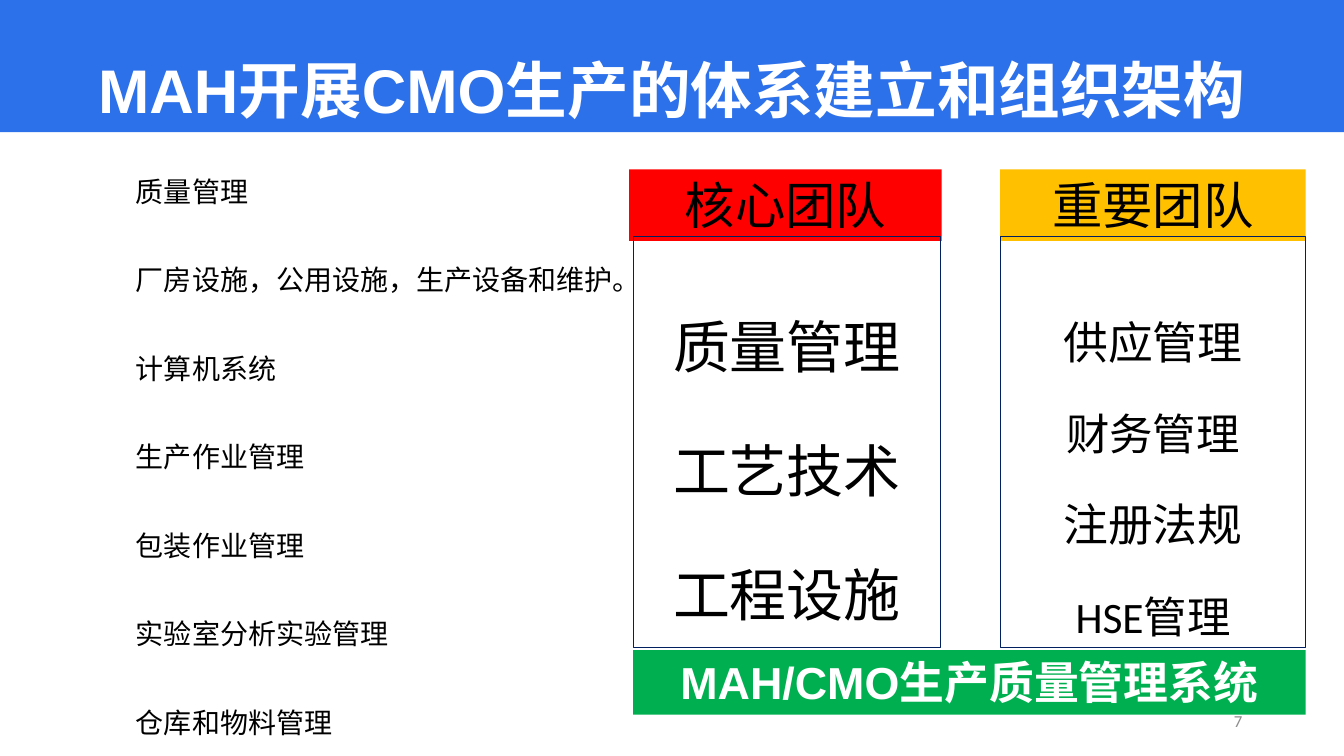
from pptx import Presentation
from pptx.dml.color import RGBColor
from pptx.enum.shapes import MSO_SHAPE as Shape
from pptx.enum.text import MSO_ANCHOR as Anchor, PP_ALIGN as Align
from pptx.util import Inches, Pt

WIDTH, HEIGHT = Inches(13.33), Inches(7.5)
LIST_LEFT, CORE_LEFT, KEY_LEFT = 9.38, 47.11, 74.42
KEY_WIDTH = 22.73
HEAD_TOP, HEAD_HEIGHT = 22.4, 9.47
BODY_TOP, BODY_HEIGHT = 31.33, 54.27
TOPICS = ["质量管理", "厂房设施，公用设施，生产设备和维护。", "计算机系统", "生产作业管理",
          "包装作业管理", "实验室分析实验管理", "仓库和物料管理"]
CORE_TEAM = ["质量管理", "工艺技术", "工程设施"]
KEY_TEAM = ["供应管理", "财务管理", "注册法规", "HSE管理"]


def color(value):
    """Turn a hex string into a colour."""
    return RGBColor.from_string(value)


def area(left, top, width, height):
    """Turn percentages of the slide into a position and size."""
    return (int(WIDTH * left / 100), int(HEIGHT * top / 100),
            int(WIDTH * width / 100), int(HEIGHT * height / 100))


def write(box, lines, sizes, align=Align.CENTER, anchor=Anchor.TOP, pitch=None,
          inset=0.05, **font):
    """Write one paragraph per line, with a fixed pitch if one is given."""
    frame = box.text_frame
    for name, value in {"word_wrap": True, "vertical_anchor": anchor,
                        "margin_top": Inches(inset)}.items():
        setattr(frame, name, value)
    looks = {"name": "Calibri", "bold": False} | font
    ink = looks.pop("ink", "000000")
    for index, (line, size) in enumerate(zip(lines, sizes)):
        para = frame.add_paragraph() if index else frame.paragraphs[0]
        para.alignment = align
        if pitch:
            height = round(sizes[0] * 1.2)
            para.line_spacing = Pt(height)
            para.space_before = Pt(pitch - height if index else 0)
        span = para.add_run()
        span.text = line
        for name, value in (looks | {"size": Pt(size)}).items():
            setattr(span.font, name, value)
        span.font.color.rgb = color(ink)


def add_title(page, text):
    """Fill the title placeholder as a banner across the top."""
    title = page.shapes.title
    title.left, title.top, title.width, title.height = area(0, 0, 100, 17.47)
    title.fill.solid()
    title.fill.fore_color.rgb = color("2C70EA")
    write(title, [text], [44], anchor=Anchor.BOTTOM, name="Arial", bold=True, ink="FFFFFF")
    title.text_frame.paragraphs[0].line_spacing = 0.9


def add_text(page, place, lines, sizes, **layout):
    """Add a plain text box."""
    write(page.shapes.add_textbox(*area(*place)), lines, sizes, **layout)


def add_panel(page, place, lines, sizes, fill=None, **layout):
    """Add a filled bar, or an outlined box when no fill is given."""
    panel = page.shapes.add_shape(Shape.RECTANGLE, *area(*place))
    panel.shadow.inherit = False
    if fill:
        panel.fill.solid()
        panel.fill.fore_color.rgb = color(fill)
        panel.line.fill.background()
    else:
        panel.fill.background()
        panel.line.color.rgb = color("002060")
        panel.line.width = Pt(0.75)
    write(panel, lines, sizes, **layout)


def main():
    """Build the slide and save it."""
    deck = Presentation()
    deck.slide_width, deck.slide_height = WIDTH, HEIGHT
    page = deck.slides.add_slide(deck.slide_layouts[5])
    add_title(page, "MAH开展CMO生产的体系建立和组织架构")
    add_text(page, (70.67, 92.67, 22.5, 5.33), ["7"], [12],
             align=Align.RIGHT, anchor=Anchor.MIDDLE, ink="8C8C8C")
    add_text(page, (LIST_LEFT, HEAD_TOP, 80.2, 64.27), TOPICS, [20] * len(TOPICS),
             align=Align.LEFT, pitch=63.2)
    add_panel(page, (46.81, HEAD_TOP, 23.26, HEAD_HEIGHT), ["核心团队"], [36], "FF0000")
    add_panel(page, (KEY_LEFT, HEAD_TOP, KEY_WIDTH, HEAD_HEIGHT), ["重要团队"], [36], "FFC000")
    add_panel(page, (CORE_LEFT, BODY_TOP, 22.88, BODY_HEIGHT), CORE_TEAM,
              [40.7] * len(CORE_TEAM), pitch=88.6, inset=0.74)
    add_panel(page, (KEY_LEFT, BODY_TOP, KEY_WIDTH, BODY_HEIGHT), KEY_TEAM,
              [32, 31, 32, 31], pitch=65, inset=0.78)
    add_panel(page, (CORE_LEFT, 86, KEY_LEFT + KEY_WIDTH - CORE_LEFT, 8.53),
              ["MAH/CMO生产质量管理系统"], [32], "00B050",
              name="Arial", bold=True, ink="FFFFFF")
    deck.save("out.pptx")


if __name__ == "__main__":
    main()
